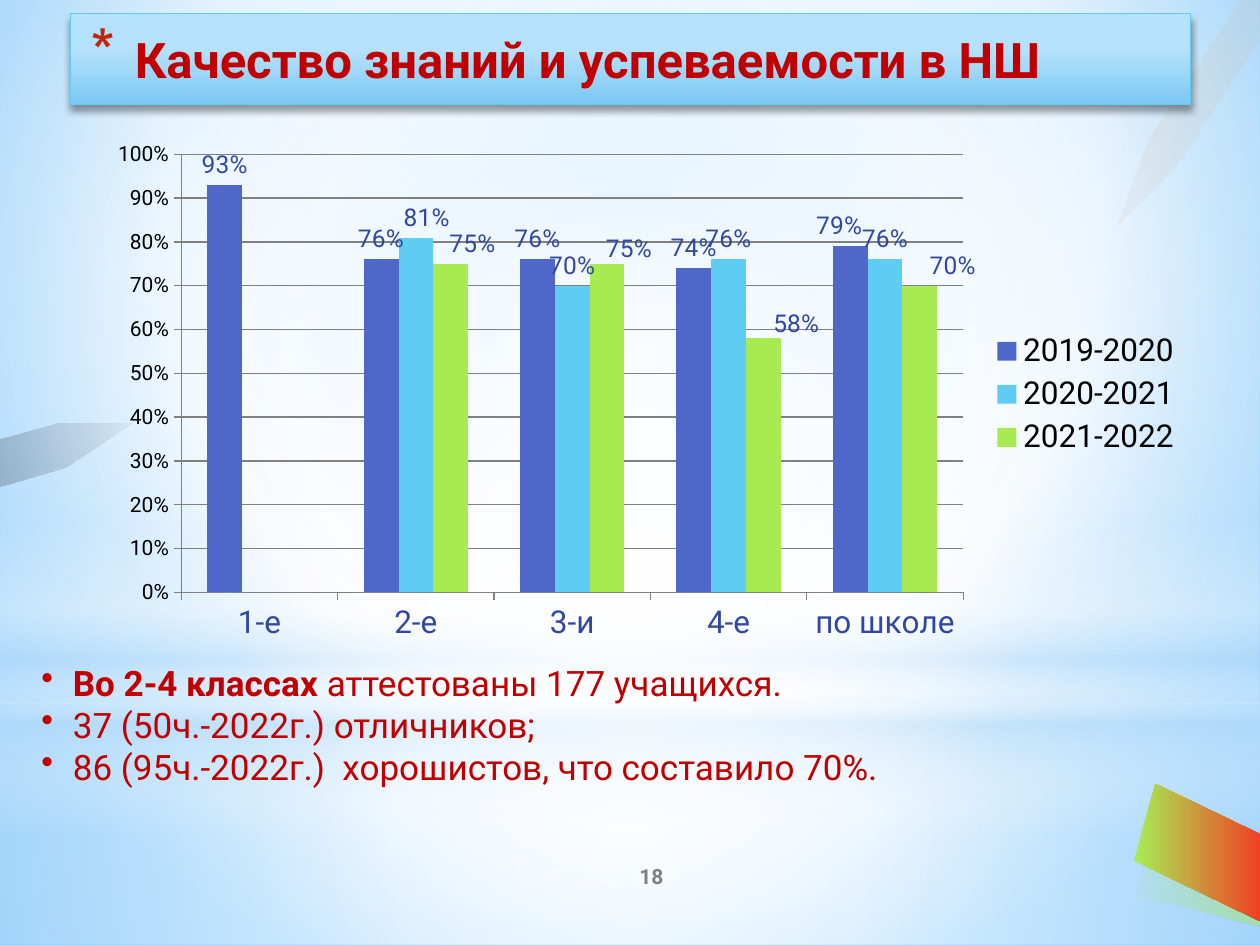
from pptx import Presentation
from pptx.chart.data import CategoryChartData
from pptx.dml.color import RGBColor
from pptx.enum.chart import XL_CHART_TYPE, XL_LABEL_POSITION, XL_LEGEND_POSITION, XL_TICK_MARK
from pptx.enum.shapes import MSO_SHAPE
from pptx.enum.text import MSO_ANCHOR, MSO_AUTO_SIZE, PP_ALIGN
from pptx.oxml import parse_xml
from pptx.oxml.ns import nsdecls, qn
from pptx.util import Inches, Pt

COLUMN = XL_CHART_TYPE.COLUMN_CLUSTERED
RIGHT = XL_LEGEND_POSITION.RIGHT
OUT_END = XL_LABEL_POSITION.OUTSIDE_END
TICK_OUT = XL_TICK_MARK.OUTSIDE
RECT, OVAL = MSO_SHAPE.RECTANGLE, MSO_SHAPE.OVAL
MIDDLE, NO_FIT = MSO_ANCHOR.MIDDLE, MSO_AUTO_SIZE.NONE
LEFT, CENTER = PP_ALIGN.LEFT, PP_ALIGN.CENTER

RED = RGBColor(0xC0, 0x00, 0x00)
NAVY = RGBColor(0x31, 0x48, 0x9F)
INDIGO = RGBColor(0x4E, 0x67, 0xC8)
SKY = RGBColor(0x5E, 0xCC, 0xF3)
LIME = RGBColor(0xA7, 0xEA, 0x52)
GRAY = RGBColor(0x80, 0x80, 0x80)
BLACK = RGBColor(0, 0, 0)
FONT = "Roboto"

TITLE = "Качество знаний и успеваемости в НШ"
NOTES = [
    [("Во 2-4 классах", True), (" аттестованы 177 учащихся.", False)],
    [("37 (50ч.-2022г.) отличников;", False)],
    [("86 (95ч.-2022г.)  хорошистов, что составило 70%.", False)],
]
PAGE = "18"
CLASSES = ["1-е", "2-е", "3-и", "4-е", "по школе"]
# name, colour, values, label shifts by point (share of chart size)
YEARS = [
    ("2019-2020", INDIGO, [0.93, 0.76, 0.76, 0.74, 0.79], {3: (0, 0), 4: (-0.01, 0)}),
    ("2020-2021", SKY, [None, 0.81, 0.7, 0.76, 0.76], {1: (0.01, 0)}),
    ("2021-2022", LIME, [None, 0.75, 0.75, 0.58, 0.7],
     {1: (0.02, 0), 2: (0.02, 0.01), 3: (0.03, 0.01), 4: (0.03, 0)}),
]
PLOT = {"x": 0.08, "y": 0.04, "w": 0.71, "h": 0.84}

# Gradient stops: position, colour, opacity
MID = (50, 50, 50, 50)
BACK = [(0, "9ED5FF", 100), (60, "FFFFFF", 100), (100, "5BB9FF", 100)]
BANNER = [(0, "B4E1FB", 100), (40, "B4E1FB", 100), (100, "7BC8F3", 100)]
GLOWS = [
    (RECT, (0, 5.58, 10, 1.92),
     [(0, "FFFFFF", 91), (37, "FFFFFF", 76), (100, "B4DCFA", 79)], {"focus": MID}),
    (RECT, (0, 0, 10, 5.58),
     [(0, "FFFFFF", 89), (48, "FFFFFF", 62), (100, "B4DCFA", 79)], {"focus": MID}),
    (RECT, (0, 4.12, 10, 2.5),
     [(0, "FFFFFF", 0), (29, "FFFFFF", 30), (45, "B4DCFA", 40), (55, "FFFFFF", 26),
      (65, "B4DCFA", 60), (100, "FFFFFF", 0)], {"angle": 90}),
    (OVAL, (0, 1.75, 10, 5.58),
     [(0, "FFFFFF", 100), (56, "FFFFFF", 0)], {"focus": MID}),
]
RIBBONS = [
    ([(9.01, 7.13), (9.35, 7.18), (10, 7.35), (10, 6.68), (9.42, 6.54), (9.18, 6.52)],
     [(3, "A7EA52", 6), (100, "A7EA52", 50)], 0),
    ([(10, 6.62), (9.17, 6.22), (9, 6.83), (10, 7.31)],
     [(3, "A7EA52", 100), (100, "F14124", 100)], 0),
    ([(1.05, 3.36), (0.44, 3.36), (0, 3.48), (0, 3.86), (0.52, 3.71)],
     [(0, "212745", 5), (100, "000000", 20)], 164),
    ([(9.84, 0), (9.12, 1.09), (8.86, 1.8), (9.35, 1.3), (10, 0.31), (10, 0)],
     [(0, "FF8021", 5), (100, "B4DCFA", 20)], 53),
]


def box(*sizes):
    return [Inches(n) for n in sizes]


def style(font, **values):
    values = {"name": FONT, **values}
    color = values.pop("color", None)
    for key, value in values.items():
        setattr(font, key, value)
    if color is not None:
        font.color.rgb = color


def shade(props, stops, angle=0, focus=None):
    """Swap the solid fill in props for a linear or circular gradient."""
    marks = "".join(
        f'<a:gs pos="{pos * 1000}"><a:srgbClr val="{color}">'
        f'<a:alpha val="{alpha * 1000}"/></a:srgbClr></a:gs>'
        for pos, color, alpha in stops)
    if focus:
        sides = " ".join(f'{side}="{n * 1000}"' for side, n in zip("ltrb", focus))
        way = f'<a:path path="circle"><a:fillToRect {sides}/></a:path>'
    else:
        way = f'<a:lin ang="{angle * 60000}" scaled="0"/>'
    props.replace(props.find(qn("a:solidFill")), parse_xml(
        f'<a:gradFill {nsdecls("a")} rotWithShape="1"><a:gsLst>{marks}</a:gsLst>{way}</a:gradFill>'))


def paint(shape, stops, **way):
    shape.shadow.inherit = False
    shape.line.fill.background()
    shape.fill.solid()
    shade(shape._element.spPr, stops, **way)


def bullet(para, mark, indent, extra=""):
    props = para._p.get_or_add_pPr()
    props.set("marL", str(Inches(indent)))
    props.set("indent", str(-Inches(indent)))
    for tag in [extra, f'<a:buChar {nsdecls("a")} char="{mark}"/>']:
        if tag:
            for node in parse_xml(f'<a:pPr {nsdecls("a")}>{tag}</a:pPr>'):
                props.append(node)


def place(parent, index, **parts):
    """Insert a manual chart layout into parent."""
    tags = "".join(f'<c:{key} val="{value}"/>' for key, value in parts.items())
    parent.insert(index, parse_xml(
        f'<c:layout {nsdecls("c")}><c:manualLayout>{tags}</c:manualLayout></c:layout>'))


def add_title(slide):
    title = slide.shapes.title
    slide.shapes._spTree.append(title._element)
    title.left, title.top, title.width, title.height = box(0.56, 0.11, 8.89, 0.72)
    title.fill.solid()
    title.line.color.rgb = SKY
    title.line.width = Pt(0.75)
    props = title._element.spPr
    shade(props, BANNER, angle=90)
    props.append(parse_xml(
        f'<a:effectLst {nsdecls("a")}><a:outerShdw blurRad="50800" dist="38100" dir="5400000">'
        '<a:srgbClr val="000000"><a:alpha val="40000"/></a:srgbClr></a:outerShdw></a:effectLst>'))
    frame = title.text_frame
    frame.auto_size, frame.vertical_anchor, frame.word_wrap = NO_FIT, MIDDLE, True
    frame.margin_left = Inches(0.16)
    para = frame.paragraphs[0]
    para.alignment = LEFT
    bullet(para, "*", 0.35,
           '<a:buClr><a:srgbClr val="C3260C"/></a:buClr><a:buSzPct val="128000"/>')
    run = para.add_run()
    run.text = TITLE
    style(run.font, size=Pt(28), bold=True, color=RED)


def add_marks(slide):
    data = CategoryChartData(number_format="0%")
    data.categories = CLASSES
    for name, _, values, _ in YEARS:
        data.add_series(name, values)
    chart = slide.shapes.add_chart(COLUMN, *box(0.74, 1.06, 8.74, 4.14), data).chart
    style(chart.font, size=Pt(10), color=BLACK)
    chart.has_title = False
    chart.has_legend = True
    chart.legend.position, chart.legend.include_in_layout = RIGHT, False
    style(chart.legend.font, size=Pt(18), color=BLACK)
    area = chart._chartSpace.chart.plotArea
    for old in area.findall(qn("c:layout")):
        area.remove(old)
    place(area, 0, layoutTarget="inner", xMode="edge", yMode="edge", **PLOT)

    scale = chart.value_axis
    scale.minimum_scale, scale.maximum_scale, scale.major_unit = 0, 1, 0.1
    scale.tick_labels.number_format = "0%"
    scale.tick_labels.number_format_is_linked = False
    scale.major_gridlines.format.line.color.rgb = GRAY
    for axis, size, color in [(scale, 12, BLACK), (chart.category_axis, 18, NAVY)]:
        axis.major_tick_mark = TICK_OUT
        axis.format.line.color.rgb = GRAY
        style(axis.tick_labels.font, size=Pt(size), color=color)

    plot = chart.plots[0]
    plot.gap_width, plot.overlap, plot.vary_by_categories = 150, 0, False
    for series, (_, color, _, shifts) in zip(plot.series, YEARS):
        series.format.fill.solid()
        series.format.fill.fore_color.rgb = color
        labels = series.data_labels
        labels.show_value, labels.position = True, OUT_END
        labels.number_format, labels.number_format_is_linked = "0%", False
        style(labels.font, size=Pt(14), color=NAVY)
        for point, (x, y) in shifts.items():
            label = series.points[point].data_label
            style(label.font, size=Pt(14), color=NAVY)
            label.position = OUT_END
            place(labels._element.findall(qn("c:dLbl"))[-1], 1, x=x, y=y)


def add_notes(slide):
    frame = slide.shapes.add_textbox(*box(0.23, 5.2, 9.27, 1.26)).text_frame
    frame.word_wrap = True
    for i, parts in enumerate(NOTES):
        para = frame.add_paragraph() if i else frame.paragraphs[0]
        bullet(para, "•", 0.25, '<a:buClr><a:srgbClr val="C00000"/></a:buClr>')
        for words, bold in parts:
            run = para.add_run()
            run.text = words
            style(run.font, size=Pt(20), bold=bold, color=RED)


def add_page(slide):
    frame = slide.shapes.add_textbox(*box(4.17, 6.75, 2, 0.4)).text_frame
    frame.word_wrap, frame.vertical_anchor = True, MIDDLE
    para = frame.paragraphs[0]
    para.text, para.alignment = PAGE, CENTER
    style(para.runs[0].font, size=Pt(12), bold=True, color=GRAY)


def main():
    deck = Presentation()
    deck.slide_width, deck.slide_height = box(10, 7.5)
    slide = deck.slides.add_slide(deck.slide_layouts[5])
    slide.background.fill.solid()
    shade(slide._element.find(".//" + qn("p:bgPr")), BACK, focus=(20, 10, 20, 60))
    for kind, area, stops, way in GLOWS:
        paint(slide.shapes.add_shape(kind, *box(*area)), stops, **way)
    for points, stops, angle in RIBBONS:
        start, *rest = [box(*point) for point in points]
        pen = slide.shapes.build_freeform(*start)
        pen.add_line_segments(rest)
        paint(pen.convert_to_shape(), stops, angle=angle)
    add_title(slide)
    add_page(slide)
    add_marks(slide)
    add_notes(slide)
    deck.save("out.pptx")


if __name__ == "__main__":
    main()
